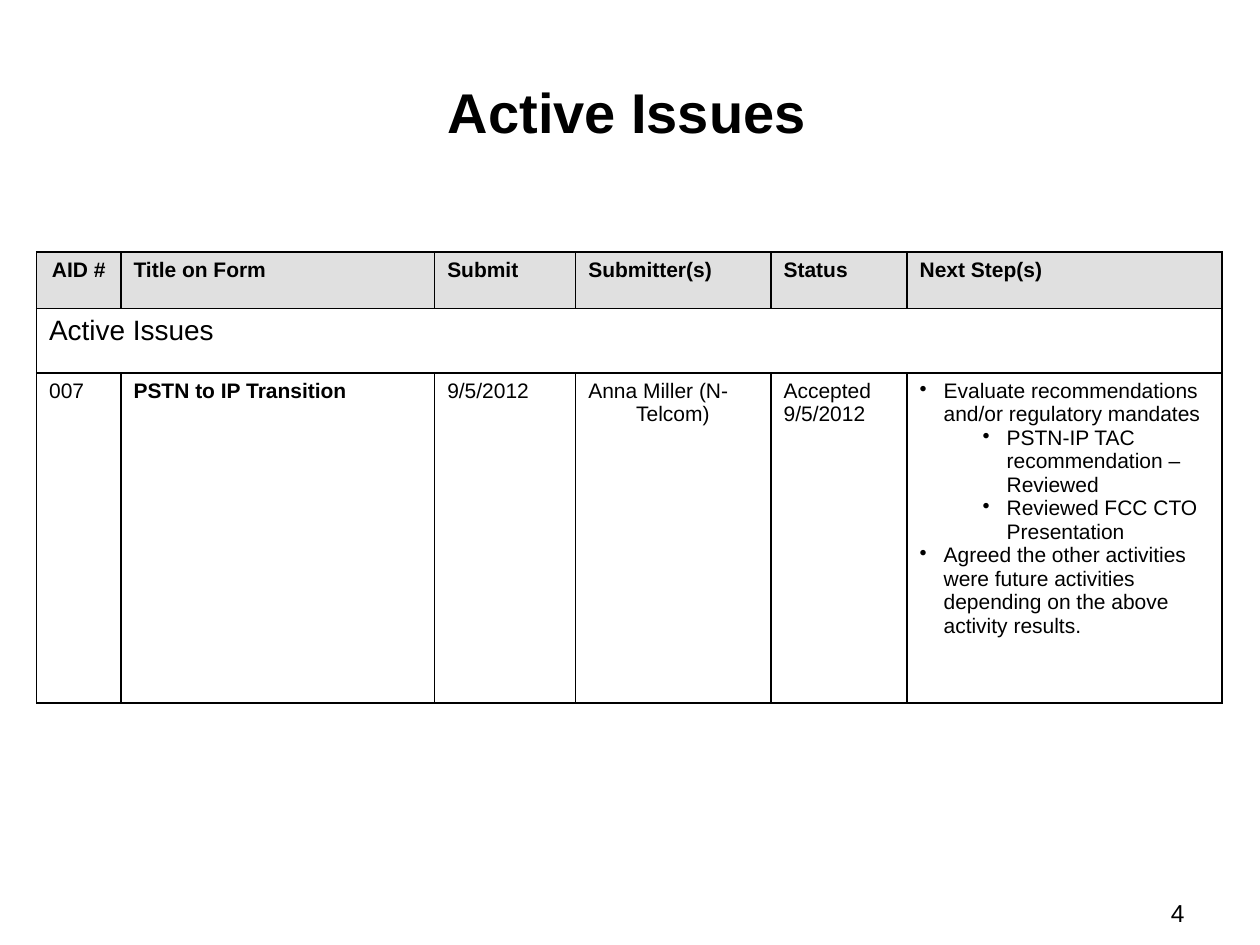
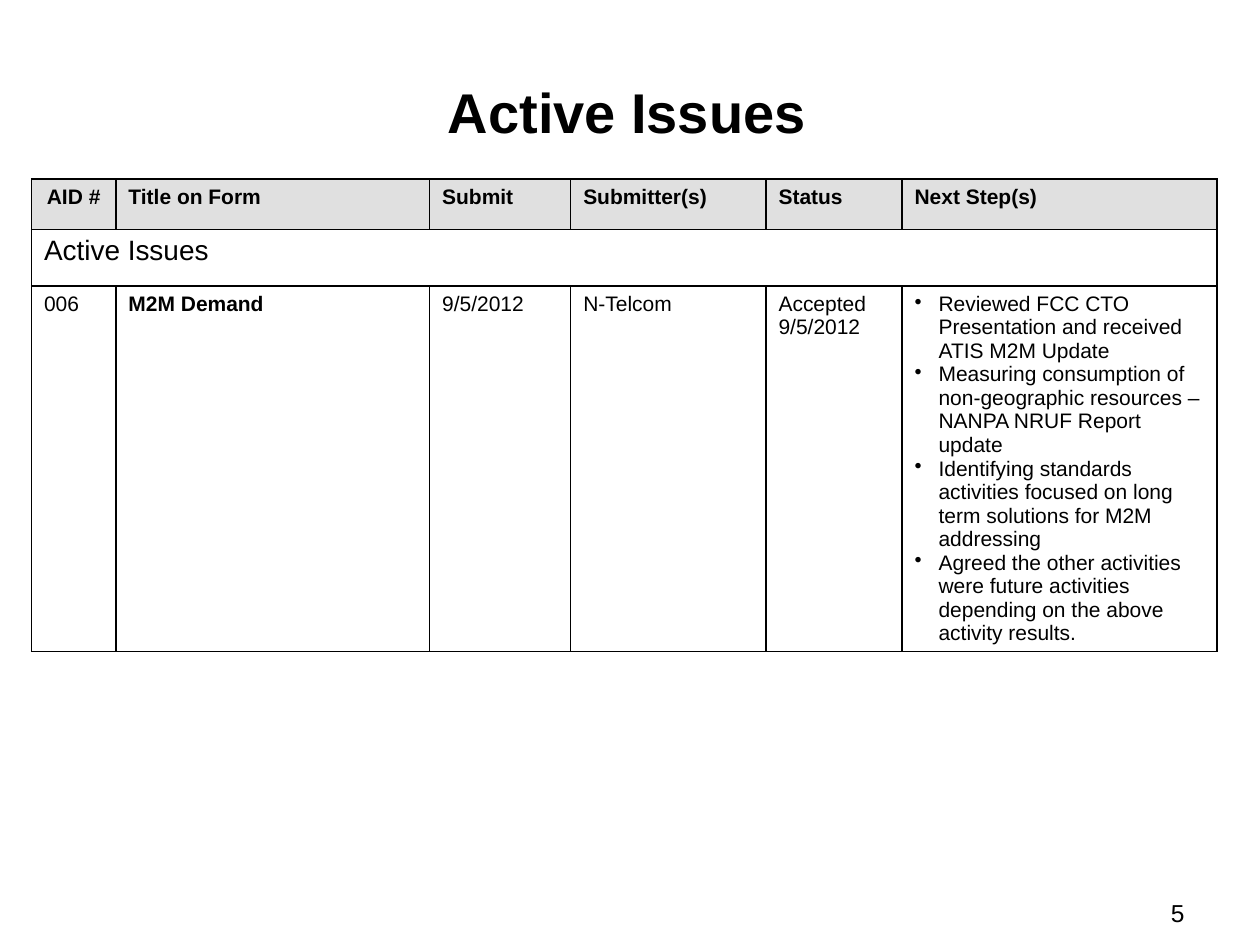
from dataclasses import dataclass

from lxml.etree import SubElement
from pptx import Presentation
from pptx.dml.color import RGBColor
from pptx.enum.text import MSO_ANCHOR, PP_ALIGN
from pptx.oxml.ns import qn
from pptx.util import Inches, Pt

# Shared style
FONT = "Arial"
BLACK = RGBColor(0x00, 0x00, 0x00)
HEADER_GREY = RGBColor(0xE0, 0xE0, 0xE0)
BORDER_WIDTH = Pt(1)
HANGING = 0.38
BULLET_HANGING = 0.19
SUB_BULLET_LEFT = 0.69

TITLE = "Active Issues"
HEADERS = ("AID #", "Title on Form", "Submit", "Submitter(s)", "Status", "Next Step(s)")
COLUMN_WIDTHS = (0.67, 2.49, 1.12, 1.55, 1.08, 2.5)


@dataclass(frozen=True)
class Step:
    text: str
    level: int = 0


@dataclass(frozen=True)
class Issue:
    aid: str
    title: str
    submitted: str
    submitter: str
    status: str
    next_steps: tuple[Step, ...]


@dataclass(frozen=True)
class IssuePage:
    number: int
    left: float
    top: float
    row_heights: tuple[float, float, float]
    issue: Issue


FUTURE_ACTIVITIES = Step(
    "Agreed the other activities were future activities "
    "depending on the above activity results."
)

PAGES = (
    IssuePage(4, 0.29, 2, (0.45, 0.51, 2.62), Issue(
        "007", "PSTN to IP Transition", "9/5/2012",
        "Anna Miller (N-Telcom)", "Accepted 9/5/2012",
        (
            Step("Evaluate recommendations and/or regulatory mandates"),
            Step("PSTN-IP TAC recommendation – Reviewed", 1),
            Step("Reviewed FCC CTO Presentation", 1),
            FUTURE_ACTIVITIES,
        ),
    )),
    IssuePage(5, 0.25, 1.42, (0.4, 0.45, 2.9), Issue(
        "006", "M2M Demand", "9/5/2012", "N-Telcom", "Accepted 9/5/2012",
        (
            Step("Reviewed FCC CTO Presentation and received ATIS M2M Update"),
            Step("Measuring consumption of non-geographic resources – "
                 "NANPA NRUF Report update"),
            Step("Identifying standards activities focused on long term "
                 "solutions for M2M addressing"),
            FUTURE_ACTIVITIES,
        ),
    )),
)


def style_font(paragraph, size: float | None = None, bold: bool = False) -> None:
    font = paragraph.font
    font.name = FONT
    font.bold = bold
    font.color.rgb = BLACK
    if size is not None:
        font.size = Pt(size)


def set_indent(paragraph, left: float, hanging: float, bullet: str = "") -> None:
    properties = paragraph._p.get_or_add_pPr()
    properties.set("marL", str(Inches(left)))
    properties.set("indent", str(-Inches(hanging)))
    if bullet:
        SubElement(properties, qn("a:buChar")).set("char", bullet)


def write_cell(cell, text: str, size: float = 12, bold: bool = False,
               hanging: float = HANGING) -> None:
    paragraph = cell.text_frame.paragraphs[0]
    paragraph.text = text
    set_indent(paragraph, hanging, hanging)
    style_font(paragraph, size, bold)


def write_steps(cell, steps: tuple[Step, ...]) -> None:
    frame = cell.text_frame
    for index, step in enumerate(steps):
        paragraph = frame.add_paragraph() if index else frame.paragraphs[0]
        paragraph.text = step.text
        paragraph.level = step.level
        left = SUB_BULLET_LEFT if step.level else BULLET_HANGING
        set_indent(paragraph, left, BULLET_HANGING, "•")
        style_font(paragraph, 12)


def add_borders(cell) -> None:
    properties = cell._tc.get_or_add_tcPr()
    for side in ("lnL", "lnR", "lnT", "lnB"):
        border = SubElement(properties, qn(f"a:{side}"), w=str(BORDER_WIDTH))
        fill = SubElement(border, qn("a:solidFill"))
        SubElement(fill, qn("a:srgbClr"), val=str(BLACK))


def add_title(slide) -> None:
    title = slide.shapes.title
    title.left, title.top = Inches(0.5), Inches(0.42)
    title.width, title.height = Inches(9), Inches(0.83)
    title.text_frame.vertical_anchor = MSO_ANCHOR.MIDDLE
    paragraph = title.text_frame.paragraphs[0]
    paragraph.alignment = PP_ALIGN.CENTER
    style_font(paragraph, bold=True)
    # The larger trailing space sets the line height
    for text, size in ((f" {TITLE}", 32), (" ", 40)):
        run = paragraph.add_run()
        run.text = text
        run.font.size = Pt(size)


def add_issue_table(slide, page: IssuePage) -> None:
    table = slide.shapes.add_table(
        len(page.row_heights), len(HEADERS),
        Inches(page.left), Inches(page.top),
        Inches(sum(COLUMN_WIDTHS)), Inches(sum(page.row_heights)),
    ).table
    table.first_row = table.horz_banding = False
    for column, width in zip(table.columns, COLUMN_WIDTHS):
        column.width = Inches(width)
    for row, height in zip(table.rows, page.row_heights):
        row.height = Inches(height)
    for cell in table.iter_cells():
        add_borders(cell)
        cell.fill.background()

    # Header row
    for cell, header in zip(table.rows[0].cells, HEADERS):
        cell.fill.solid()
        cell.fill.fore_color.rgb = HEADER_GREY
        write_cell(cell, header, bold=True)
    table.cell(0, 0).text_frame.paragraphs[0].alignment = PP_ALIGN.CENTER

    # Section row
    section = table.cell(1, 0)
    section.merge(table.cell(1, len(HEADERS) - 1))
    write_cell(section, TITLE, size=16)

    # Issue row
    issue = page.issue
    aid, title, submitted, submitter, status, next_steps = table.rows[2].cells
    write_cell(aid, issue.aid)
    write_cell(title, issue.title, bold=True)
    write_cell(submitted, issue.submitted)
    write_cell(submitter, issue.submitter)
    write_cell(status, issue.status, hanging=0)
    write_steps(next_steps, issue.next_steps)


def add_page_number(slide, number: int) -> None:
    footer = slide.shapes.add_textbox(
        Inches(7.17), Inches(7.08), Inches(2.33), Inches(0.27))
    footer.text_frame.word_wrap = True
    paragraph = footer.text_frame.paragraphs[0]
    paragraph.text = str(number)
    paragraph.alignment = PP_ALIGN.RIGHT
    style_font(paragraph, 14)


def main() -> None:
    presentation = Presentation()
    presentation.slide_width = Inches(10)
    presentation.slide_height = Inches(7.5)
    title_only = presentation.slide_layouts[5]
    for page in PAGES:
        slide = presentation.slides.add_slide(title_only)
        add_title(slide)
        add_issue_table(slide, page)
        add_page_number(slide, page.number)
    presentation.save("out.pptx")


if __name__ == "__main__":
    main()
